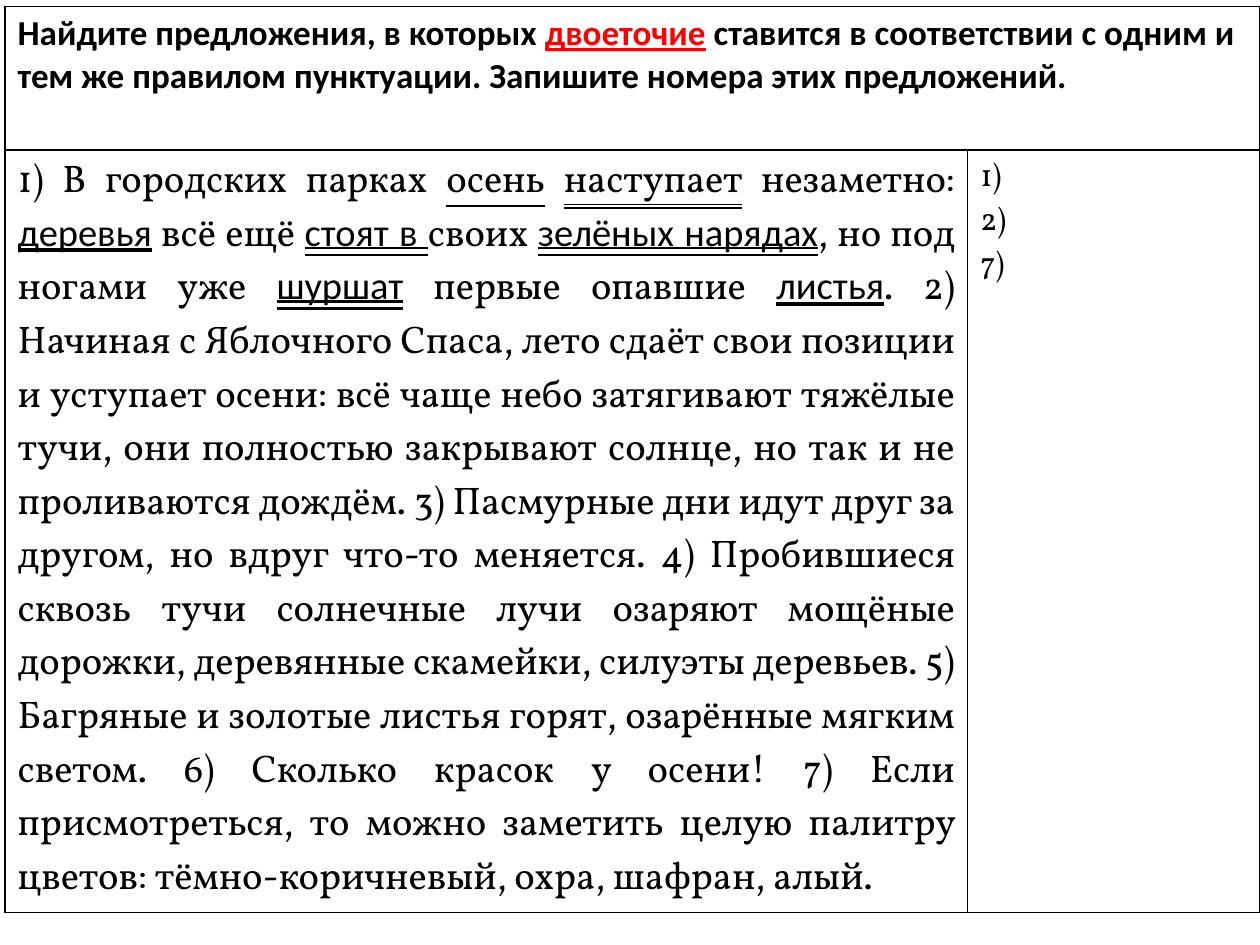
from typing import NamedTuple, Optional

from lxml.etree import SubElement
from pptx import Presentation
from pptx.dml.color import RGBColor
from pptx.enum.text import MSO_UNDERLINE, PP_ALIGN
from pptx.oxml.ns import qn
from pptx.util import Emu, Pt

EMU_PER_PX = 9144  # 100 px to the inch
BLACK = RGBColor(0x00, 0x00, 0x00)
RED = RGBColor(0xFF, 0x00, 0x00)
SANS = "Calibri"
SERIF = "Vollkorn"
SINGLE = MSO_UNDERLINE.SINGLE_LINE
DOUBLE = MSO_UNDERLINE.DOUBLE_LINE
BORDER_WIDTH = Pt(1)


class Span(NamedTuple):
    text: str
    font: str = SERIF
    underline: Optional[MSO_UNDERLINE] = None
    color: RGBColor = BLACK
    bold: bool = False


def px(length: int) -> Emu:
    return Emu(length * EMU_PER_PX)


def write_cell(cell, paragraphs: list[list[Span]], size: int,
               align: PP_ALIGN = PP_ALIGN.LEFT) -> None:
    frame = cell.text_frame
    for index, spans in enumerate(paragraphs):
        paragraph = frame.add_paragraph() if index else frame.paragraphs[0]
        paragraph.alignment = align
        for span in spans:
            run = paragraph.add_run()
            run.text = span.text
            run.font.name = span.font
            run.font.size = Pt(size)
            run.font.bold = span.bold
            run.font.underline = span.underline
            run.font.color.rgb = span.color


def frame_cell(cell) -> None:
    properties = cell._tc.get_or_add_tcPr()
    for side in ("a:lnL", "a:lnR", "a:lnT", "a:lnB"):
        line = SubElement(properties, qn(side), w=str(BORDER_WIDTH))
        fill = SubElement(line, qn("a:solidFill"))
        SubElement(fill, qn("a:srgbClr"), val=str(BLACK))
    cell.fill.background()


TASK = [
    Span("Найдите предложения, в которых ", SANS, bold=True),
    Span("двоеточие", SANS, SINGLE, RED, True),
    Span(" ставится в соответствии с одним и тем же правилом пунктуации. "
         "Запишите номера этих предложений.", SANS, bold=True),
]

SENTENCES = [
    Span("1) В городских парках "),
    Span("осень", underline=SINGLE),
    Span(" "),
    Span("наступает", underline=DOUBLE),
    Span(" незаметно: "),
    Span("деревья", SANS, SINGLE),
    Span(" всё ещё "),
    Span("стоят в ", SANS, DOUBLE),
    Span("своих "),
    Span("зелёных нарядах", SANS, DOUBLE),
    Span(", но под ногами уже "),
    Span("шуршат", SANS, DOUBLE),
    Span(" первые опавшие "),
    Span("листья", SANS, SINGLE),
    Span(". 2) Начиная с Яблочного Спаса, лето сдаёт свои позиции и уступает "
         "осени: всё чаще небо затягивают тяжёлые тучи, они полностью "
         "закрывают солнце, но так и не проливаются дождём. 3) Пасмурные дни "
         "идут друг за другом, но вдруг что-то меняется. 4) Пробившиеся "
         "сквозь тучи солнечные лучи озаряют мощёные дорожки, деревянные "
         "скамейки, силуэты деревьев. 5) Багряные и золотые листья горят, "
         "озарённые мягким светом. 6) Сколько красок у осени! 7) Если "
         "присмотреться, то можно заметить целую палитру цветов: "
         "тёмно-коричневый, охра, шафран, алый."),
]

ANSWERS = [[Span(f"{number})")] for number in (1, 2, 7)]

COLUMN_WIDTHS = (764, 232)
ROW_HEIGHTS = (114, 580)


def main() -> None:
    presentation = Presentation()
    presentation.slide_width = px(1000)
    presentation.slide_height = px(750)
    slide = presentation.slides.add_slide(presentation.slide_layouts[6])

    # Table grid
    exercise = slide.shapes.add_table(
        2, 2, px(4), px(5), px(sum(COLUMN_WIDTHS)), px(sum(ROW_HEIGHTS))).table
    exercise.first_row = False
    exercise.horz_banding = False
    for column, width in zip(exercise.columns, COLUMN_WIDTHS):
        column.width = px(width)
    for row, height in zip(exercise.rows, ROW_HEIGHTS):
        row.height = px(height)
    for cell in exercise.iter_cells():
        frame_cell(cell)

    # Task across the top, sentences and answers below
    task_cell = exercise.cell(0, 0)
    task_cell.merge(exercise.cell(0, 1))
    write_cell(task_cell, [TASK], 20)
    write_cell(exercise.cell(1, 0), [SENTENCES], 22, PP_ALIGN.JUSTIFY)
    write_cell(exercise.cell(1, 1), ANSWERS, 18)

    presentation.save("out.pptx")


if __name__ == "__main__":
    main()
